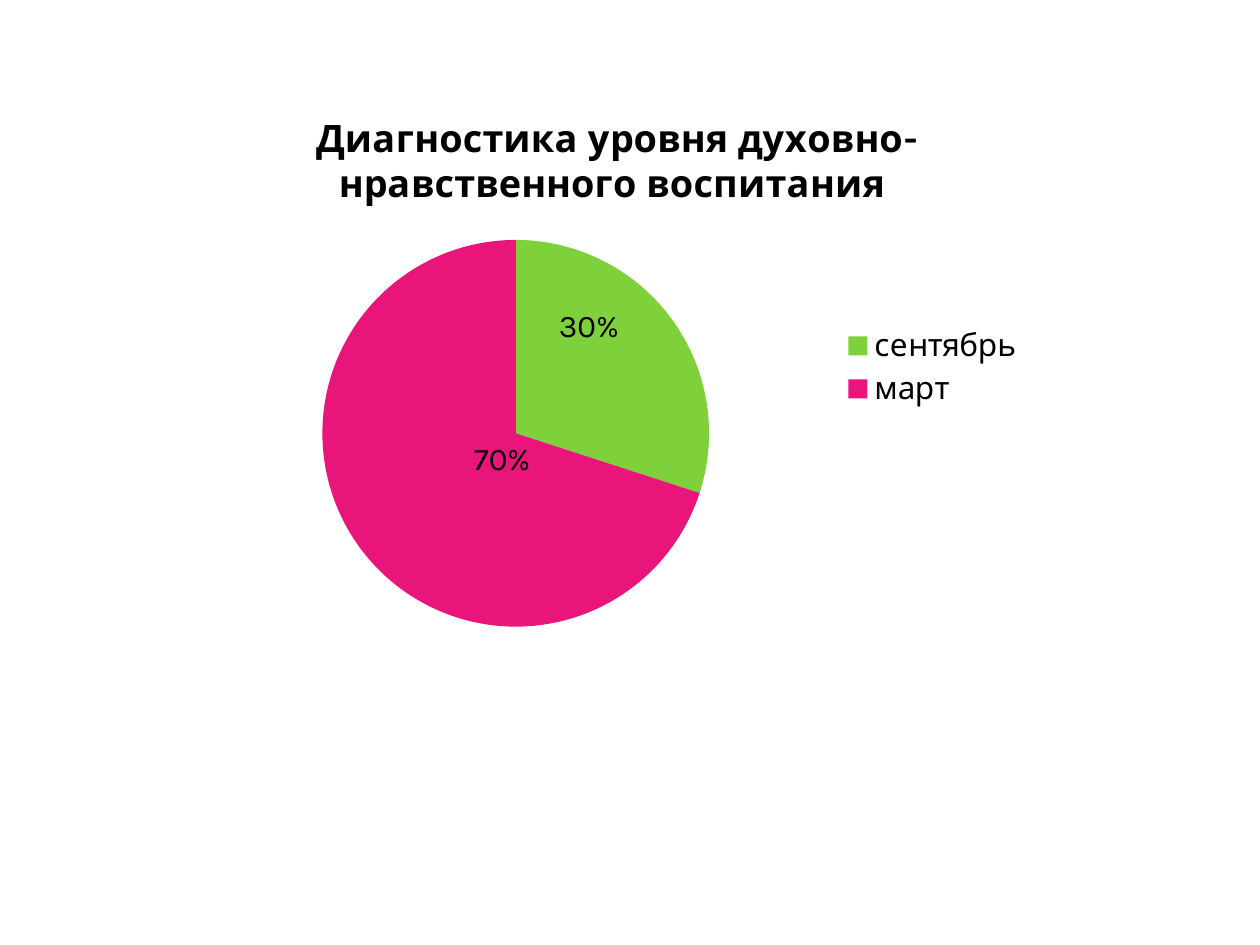
from lxml import etree
from pptx import Presentation
from pptx.chart.data import CategoryChartData
from pptx.dml.color import RGBColor
from pptx.enum.chart import XL_CHART_TYPE, XL_LABEL_POSITION, XL_LEGEND_POSITION
from pptx.oxml.ns import qn
from pptx.util import Emu, Pt

PX = 914400 // 126
PIE = XL_CHART_TYPE.PIE
CENTER = XL_LABEL_POSITION.CENTER
RIGHT = XL_LEGEND_POSITION.RIGHT

BLACK = RGBColor(0x00, 0x00, 0x00)
GREEN = RGBColor(0x7F, 0xD1, 0x3B)
PINK = RGBColor(0xEA, 0x15, 0x7A)

FONT = "Karla"
TITLE = "Диагностика уровня духовно-нравственного воспитания "
CHART_BOX = (197, 88, 840, 559)
PIE_BOX = (125, 152, 387, 387)
# category, share, colour, label shift from the middle of the slice in px
SLICES = [
    ("сентябрь", 0.3, GREEN, (-5, -50)),
    ("март", 0.7, PINK, (65, -30)),
]


def px(n):
    return Emu(n * PX)


def set_font(font, size, bold=False):
    font.name = FONT
    font.size = Pt(size)
    font.bold = bold
    font.color.rgb = BLACK


def manual_layout(**values):
    layout = etree.Element(qn("c:layout"))
    manual = etree.SubElement(layout, qn("c:manualLayout"))
    for name, value in values.items():
        etree.SubElement(manual, qn(f"c:{name}")).set("val", str(value))
    return layout


def place_plot(chart, box):
    """Fix the pie area, given in px inside the chart frame."""
    w, h = CHART_BOX[2:]
    x, y, pw, ph = (round(n / side, 3) for n, side in zip(box, (w, h, w, h)))
    area = chart._chartSpace.chart.plotArea
    for old in area.findall(qn("c:layout")):
        area.remove(old)
    area.insert(0, manual_layout(layoutTarget="inner", xMode="edge",
                                 yMode="edge", x=x, y=y, w=pw, h=ph))


def shift_label(series, i, shift):
    series.points[i].data_label.position = CENTER
    x, y = (round(n / side, 3) for n, side in zip(shift, CHART_BOX[2:]))
    label = series._element.find(qn("c:dLbls")).findall(qn("c:dLbl"))[i]
    label.find(qn("c:idx")).addnext(manual_layout(x=x, y=y))


def add_title(chart, text):
    chart.has_title = True
    tf = chart.chart_title.text_frame
    r = tf.paragraphs[0].add_run()
    r.text = text
    set_font(r.font, 21.6, bold=True)
    chart.chart_title.include_in_layout = False


def add_legend(chart):
    chart.has_legend = True
    chart.legend.position = RIGHT
    chart.legend.include_in_layout = False
    set_font(chart.legend.font, 18)


def style_slices(series):
    labels = series.data_labels
    labels.show_value = True
    labels.number_format = "0%"
    labels.number_format_is_linked = False
    labels.position = CENTER
    set_font(labels.font, 18)
    for i, (_, _, colour, shift) in enumerate(SLICES):
        fill = series.points[i].format.fill
        fill.solid()
        fill.fore_color.rgb = colour
        shift_label(series, i, shift)
        label = series.points[i].data_label
        set_font(label.font, 18)
        element = series._element.find(qn("c:dLbls")).findall(qn("c:dLbl"))[i]
        for name in ("showCatName", "showLegendKey", "showSerName", "showPercent"):
            element.find(qn(f"c:{name}")).set("val", "0")


def add_pie(s):
    data = CategoryChartData(number_format="0%")
    data.categories = [name for name, *_ in SLICES]
    data.add_series(TITLE, [share for _, share, *_ in SLICES])
    chart = s.shapes.add_chart(PIE, *map(px, CHART_BOX), data).chart
    set_font(chart.font, 18)
    chart.plots[0].vary_by_categories = True
    add_title(chart, TITLE)
    add_legend(chart)
    place_plot(chart, PIE_BOX)
    style_slices(chart.plots[0].series[0])


def main():
    prs = Presentation()
    prs.slide_width, prs.slide_height = px(1260), px(945)
    s = prs.slides.add_slide(prs.slide_layouts[6])
    add_pie(s)
    prs.save("out.pptx")


if __name__ == "__main__":
    main()
